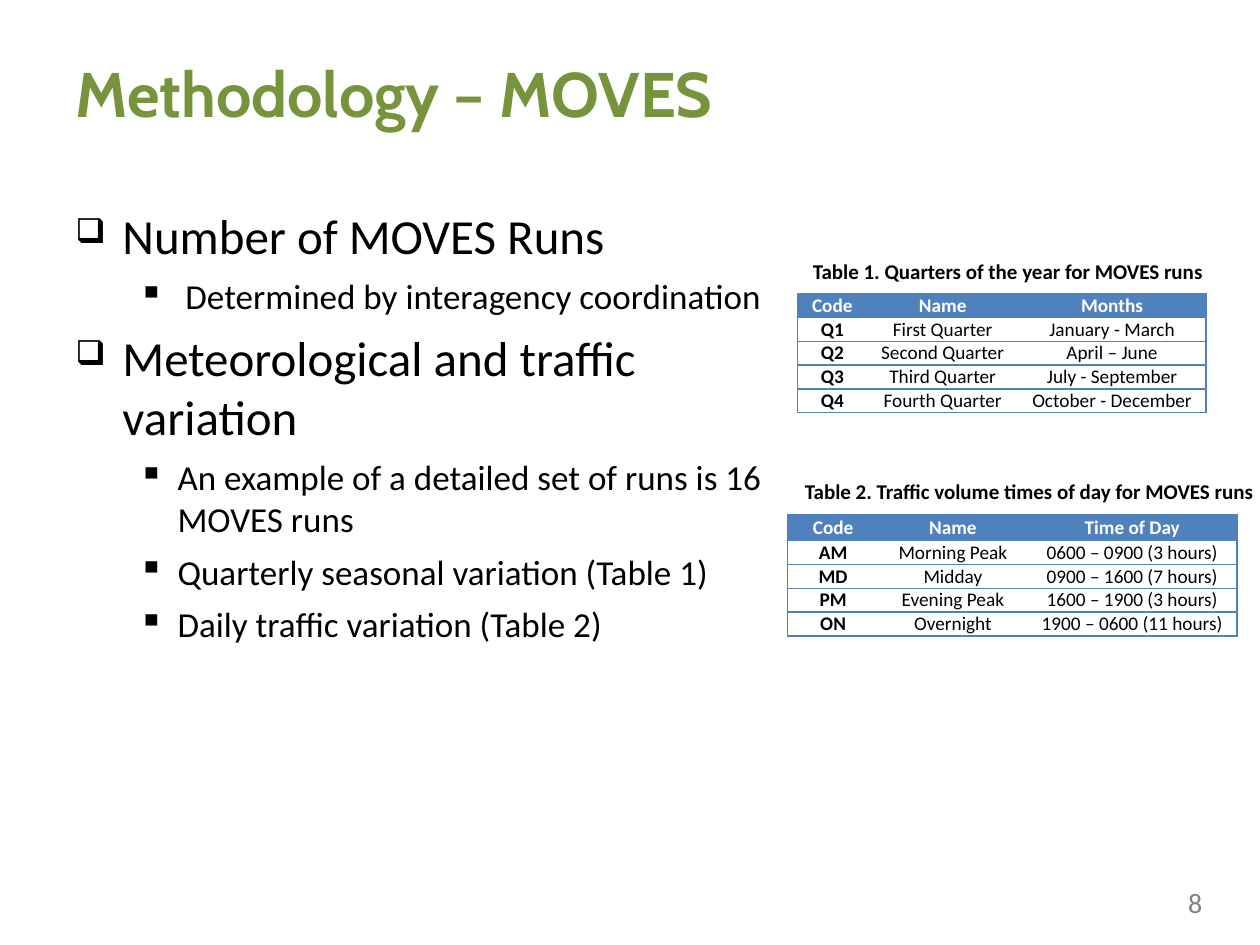
from dataclasses import dataclass

from lxml.etree import SubElement
from pptx import Presentation
from pptx.dml.color import RGBColor
from pptx.enum.text import MSO_ANCHOR as Anchor, MSO_AUTO_SIZE as AutoSize, PP_ALIGN as Align
from pptx.oxml.ns import qn
from pptx.util import Cm, Pt


@dataclass(frozen=True)
class Theme:
    """Colours, fonts and type sizes of the slide."""
    heading_font: str = "Cabin"
    body_font: str = "Calibri"
    green: str = "77933C"
    blue: str = "4F81BD"
    grey: str = "808080"
    black: str = "000000"
    white: str = "FFFFFF"
    title_size: int = 36
    level_sizes: tuple = (28, 20)
    number_size: int = 16
    caption_size: int = 12
    table_size: int = 11


LEVELS = (
    {"symbol": "❑", "percent": 70, "margin": 0.95, "hanging": 0.95},
    {"symbol": "▪", "percent": 100, "margin": 2.06, "hanging": 0.79},
)

OUTLINE = (
    (0, "Number of MOVES Runs"),
    (1, " Determined by interagency coordination"),
    (0, "Meteorological and traffic variation"),
    (1, "An example of a detailed set of runs is 16 MOVES runs"),
    (1, "Quarterly seasonal variation (Table 1)"),
    (1, "Daily traffic variation (Table 2)"),
)

QUARTERS = (
    ("Code", "Name", "Months"),
    ("Q1", "First Quarter", "January - March"),
    ("Q2", "Second Quarter", "April – June"),
    ("Q3", "Third Quarter", "July - September"),
    ("Q4", "Fourth Quarter", "October - December"),
)

DAY_PERIODS = (
    ("Code", "Name", "Time of Day"),
    ("AM", "Morning Peak", "0600 – 0900 (3 hours)"),
    ("MD", "Midday", "0900 – 1600 (7 hours)"),
    ("PM", "Evening Peak", "1600 – 1900 (3 hours)"),
    ("ON", "Overnight", "1900 – 0600 (11 hours)"),
)


def apply_format(target, values):
    """Set each named attribute of the target."""
    for name, value in values.items():
        setattr(target, name, value)


class SlideBuilder:
    """Adds styled elements to one slide."""

    def __init__(self, slide, theme):
        self.slide = slide
        self.theme = theme

    def add_text(self, paragraph, text, size, color, bold=False, font=None, **layout):
        """Fill a paragraph with one formatted run."""
        apply_format(paragraph, layout)
        run = paragraph.add_run()
        run.text = text
        apply_format(run.font, {"name": font or self.theme.body_font, "size": Pt(size), "bold": bold})
        run.font.color.rgb = RGBColor.from_string(color)

    def title(self, text, left, top, width, height):
        """Place and fill the title placeholder."""
        shape = self.slide.shapes.title
        apply_format(shape, {"left": Cm(left), "top": Cm(top), "width": Cm(width), "height": Cm(height)})
        apply_format(shape.text_frame, {"vertical_anchor": Anchor.MIDDLE, "auto_size": AutoSize.NONE})
        self.add_text(shape.text_frame.paragraphs[0], text, self.theme.title_size, self.theme.green,
                      bold=True, font=self.theme.heading_font, alignment=Align.LEFT)

    def text_frame(self, left, top, width, height):
        """Add a wrapping text box and return its frame."""
        shape = self.slide.shapes.add_textbox(Cm(left), Cm(top), Cm(width), Cm(height))
        shape.text_frame.word_wrap = True
        return shape.text_frame

    def label(self, text, box, size, color, **layout):
        """Add a single-paragraph text box."""
        self.add_text(self.text_frame(*box).paragraphs[0], text, size, color, **layout)

    def bullet(self, paragraph, symbol, percent, margin, hanging):
        """Give a paragraph a bullet and a hanging indent."""
        properties = paragraph._p.get_or_add_pPr()
        properties.set("marL", str(Cm(margin)))
        properties.set("indent", str(-Cm(hanging)))
        SubElement(properties, qn("a:buSzPct"), val=str(percent * 1000))
        SubElement(properties, qn("a:buChar"), char=symbol)

    def outline(self, items, *box):
        """Add a two-level bulleted list."""
        frame = self.text_frame(*box)
        for index, (level, text) in enumerate(items):
            paragraph = frame.add_paragraph() if index else frame.paragraphs[0]
            self.bullet(paragraph, **LEVELS[level])
            self.add_text(paragraph, text, self.theme.level_sizes[level], self.theme.black,
                          level=level, space_before=Pt(6 if index else 0))

    def borders(self, cell, sides):
        """Draw the given sides of a cell and hide the others."""
        properties = cell._tc.get_or_add_tcPr()
        for index, side in enumerate("LRTB"):
            line = properties.makeelement(qn(f"a:ln{side}"), {"w": str(Pt(1))})
            properties.insert(index, line)
            if side in sides:
                SubElement(SubElement(line, qn("a:solidFill")), qn("a:srgbClr"), val=self.theme.blue)
            else:
                SubElement(line, qn("a:noFill"))

    def table(self, rows, left, top, widths, header_height, row_height):
        """Add a table with a filled header and horizontal rules."""
        heights = [header_height] + [row_height] * (len(rows) - 1)
        frame = self.slide.shapes.add_table(len(rows), len(widths), Cm(left), Cm(top),
                                            Cm(sum(widths)), Cm(sum(heights)))
        table = frame.table
        for column, width in zip(table.columns, widths):
            column.width = Cm(width)
        for row, height in zip(table.rows, heights):
            row.height = Cm(height)
        last = len(widths) - 1
        for row_index, values in enumerate(rows):
            for column_index, text in enumerate(values):
                cell = table.cell(row_index, column_index)
                self.cell(cell, text, row_index == 0, column_index == 0)
                self.borders(cell, "TB" + "L" * (column_index == 0) + "R" * (column_index == last))

    def cell(self, cell, text, is_header, is_code):
        """Format and fill one table cell."""
        apply_format(cell, {"margin_left": Cm(0.18), "margin_right": Cm(0.18), "margin_top": 0,
                            "margin_bottom": 0, "vertical_anchor": Anchor.MIDDLE})
        if is_header:
            cell.fill.solid()
            cell.fill.fore_color.rgb = RGBColor.from_string(self.theme.blue)
        else:
            cell.fill.background()
        self.add_text(cell.text_frame.paragraphs[0], text, self.theme.table_size,
                      self.theme.white if is_header else self.theme.black,
                      bold=is_header or is_code, alignment=Align.CENTER)


def main():
    """Build the methodology slide."""
    presentation = Presentation()
    apply_format(presentation, {"slide_width": Cm(25.4), "slide_height": Cm(19.05)})
    theme = Theme()
    builder = SlideBuilder(presentation.slides.add_slide(presentation.slide_layouts[5]), theme)
    caption = {"size": theme.caption_size, "color": theme.black, "bold": True,
               "alignment": Align.CENTER, "space_after": Pt(10)}

    builder.title("Methodology – MOVES", 1.27, 0.76, 22.86, 2.21)
    builder.outline(OUTLINE, 1.27, 4.02, 14.4, 11.63)
    builder.table(QUARTERS, 16.08, 5.92, (1.4, 3.05, 3.78), 0.48, 0.48)
    builder.table(DAY_PERIODS, 15.88, 10.37, (1.83, 3, 4.23), 0.53, 0.48)
    builder.label("Table 1. Quarters of the year for MOVES runs", (13.97, 5.08, 12.7, 0.76), **caption)
    builder.label("Table 2. Traffic volume times of day for MOVES runs", (14.4, 9.53, 12.7, 0.76), **caption)
    builder.label("8", (23.7, 17.73, 1.27, 0.94), theme.number_size, theme.grey)
    presentation.save("out.pptx")


if __name__ == "__main__":
    main()
